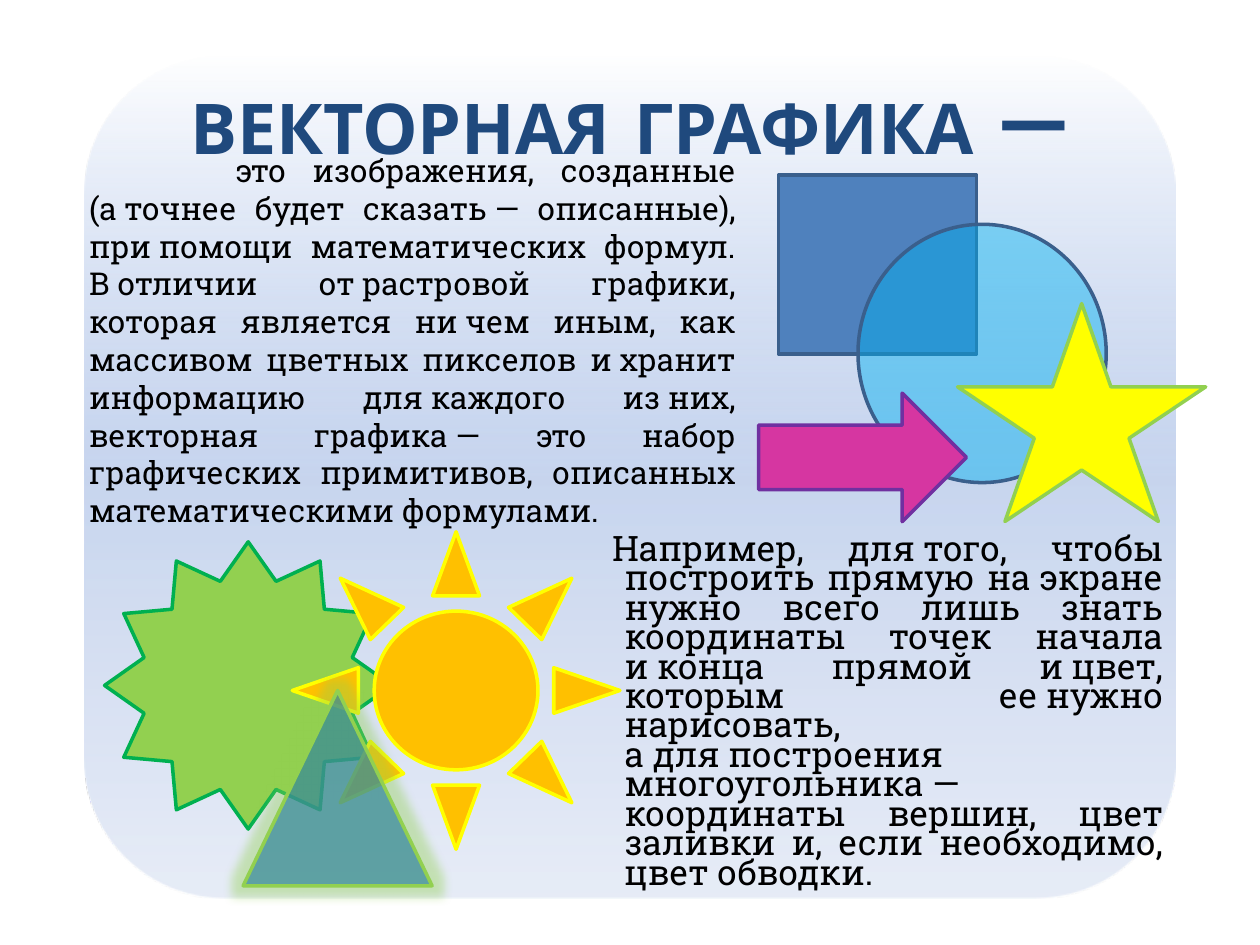
from lxml import etree
from pptx import Presentation
from pptx import util as u
from pptx.dml.color import RGBColor
from pptx.enum import shapes, text
from pptx.oxml.ns import qn

KIND = shapes.MSO_SHAPE
HEAD = [("ВЕКТОРНАЯ", 40), (" ", 54), ("ГРАФИКА", 40), ("\u00a0—", 54)]
MAIN = (
    "это изображения, созданные (а\u00a0точнее будет сказать\u00a0— описанные), "
    "при\u00a0помощи математических формул. В\u00a0отличии от\u00a0растровой графики, "
    "которая является ни\u00a0чем иным, как массивом цветных пикселов и\u00a0хранит "
    "информацию для\u00a0каждого из\u00a0них, векторная графика\u00a0— это набор "
    "графических примитивов, описанных математическими формулами."
)
CASE = (
    "Например, для\u00a0того, чтобы построить прямую на\u00a0экране нужно всего лишь "
    "знать координаты точек начала и\u00a0конца прямой и\u00a0цвет, которым ее\u00a0нужно "
    "нарисовать, а\u00a0для\u00a0построения многоугольника\u00a0— координаты вершин, "
    "цвет заливки и, если необходимо, цвет обводки."
)
# kind, box, fill, line, opacity in percent
FIGS = [
    (KIND.RECTANGLE, (6.18, 1.39, 1.57, 1.42), "4F81BD", "3A5F8C", 100),
    (KIND.OVAL, (6.81, 1.78, 1.97, 2.05), "00B0F0", "3A5F8C", 46),
    (KIND.STAR_5_POINT, (7.6, 2.41, 1.97, 1.73), "FFFF00", "92D050", 100),
    (KIND.STAR_12_POINT, (0.83, 4.3, 2.28, 2.28), "92D050", "00B050", 100),
    (KIND.SUN, (2.32, 4.22, 2.6, 2.52), "FFC000", "FFFF00", 100),
    (KIND.RIGHT_ARROW, (6.02, 3.12, 1.65, 1.02), "D636A1", "7030A0", 100),
    (KIND.ISOSCELES_TRIANGLE, (1.93, 5.48, 1.5, 1.55), "31859C", "92D050", 69),
]


def rgb(code):
    return RGBColor.from_string(code)


def sub(node, tag, **attrs):
    """Add a DrawingML child element."""
    return etree.SubElement(node, qn("a:" + tag), {k: str(v) for k, v in attrs.items()})


def tint(node, code, alpha):
    """Add a colour with an opacity in percent."""
    sub(sub(node, "srgbClr", val=code), "alpha", val=alpha * 1000)


class Deck:
    face, ink = "Roboto Slab", "000000"
    top_face, top_ink = "Karla", "1F497D"

    def __init__(self):
        self.file = Presentation()
        self.file.slide_width, self.file.slide_height = u.Inches(10), u.Inches(7.5)
        self.slide = self.file.slides.add_slide(self.file.slide_layouts[5])

    def font(self, run, size, face, ink, bold=False):
        run.font.size, run.font.name, run.font.bold = u.Pt(size), face, bold
        run.font.color.rgb = rgb(ink)

    def title(self, box, parts):
        head = self.slide.shapes.title
        head.left, head.top, head.width, head.height = map(u.Inches, box)
        head.text_frame.vertical_anchor = text.MSO_ANCHOR.MIDDLE
        para = head.text_frame.paragraphs[0]
        para.alignment = text.PP_ALIGN.CENTER
        for words, size in parts:
            run = para.add_run()
            run.text = words
            self.font(run, size, self.top_face, self.top_ink, True)

    def shape(self, kind, box):
        item = self.slide.shapes.add_shape(kind, *map(u.Inches, box))
        item.shadow.inherit = False
        return item

    def panel(self, box, stops):
        """Add a rounded panel with a downward gradient, behind all else."""
        item = self.shape(KIND.ROUNDED_RECTANGLE, box)
        item.line.fill.background()
        item.fill.gradient()
        grad = item._element.spPr.find(qn("a:gradFill"))
        for node in list(grad):
            grad.remove(node)
        band = sub(grad, "gsLst")
        for pos, code, alpha in stops:
            tint(sub(band, "gs", pos=pos * 1000), code, alpha)
        sub(grad, "lin", ang=5400000, scaled=0)
        self.slide.shapes._spTree.insert(2, item._element)

    def figure(self, kind, box, fill, line, alpha):
        item = self.shape(kind, box)
        item.fill.solid()
        item.fill.fore_color.rgb = rgb(fill)
        item.line.color.rgb, item.line.width = rgb(line), u.Pt(2)
        if alpha < 100:
            node = item._element.spPr.find(qn("a:solidFill"))[0]
            sub(node, "alpha", val=alpha * 1000)
        return item

    def glow(self, item, code, size, alpha):
        node = item._element.spPr.find(qn("a:effectLst"))
        tint(sub(node, "glow", rad=u.Inches(size)), code, alpha)

    def prose(self, box, words, size, first, space=1.0):
        """Add a justified paragraph; first is its first-line indent."""
        frame = self.slide.shapes.add_textbox(*map(u.Inches, box)).text_frame
        frame.word_wrap = True
        frame.text = words
        para = frame.paragraphs[0]
        para.alignment, para.line_spacing = text.PP_ALIGN.JUSTIFY, space
        props = para._p.get_or_add_pPr()
        props.set("marL", str(u.Inches(0.1)))
        props.set("indent", str(u.Inches(first)))
        self.font(para.runs[0], size, self.face, self.ink)


def main():
    deck = Deck()
    deck.panel((0.67, 0.44, 8.66, 6.69),
               [(0, "9AB5E4", 0), (50, "C2D1ED", 91), (100, "E1E8F5", 80)])
    deck.title((0.5, 0.3, 9, 1.25), HEAD)
    deck.prose((0.51, 1.15, 5.43, 3.07), MAIN, 18, 1.16)
    deck.prose((4.76, 4.22, 4.57, 2.91), CASE, 20, -0.1, 0.7)
    for fig in FIGS:
        last = deck.figure(*fig)
    deck.glow(last, "92D050", 0.15, 40)
    deck.file.save("out.pptx")


if __name__ == "__main__":
    main()
